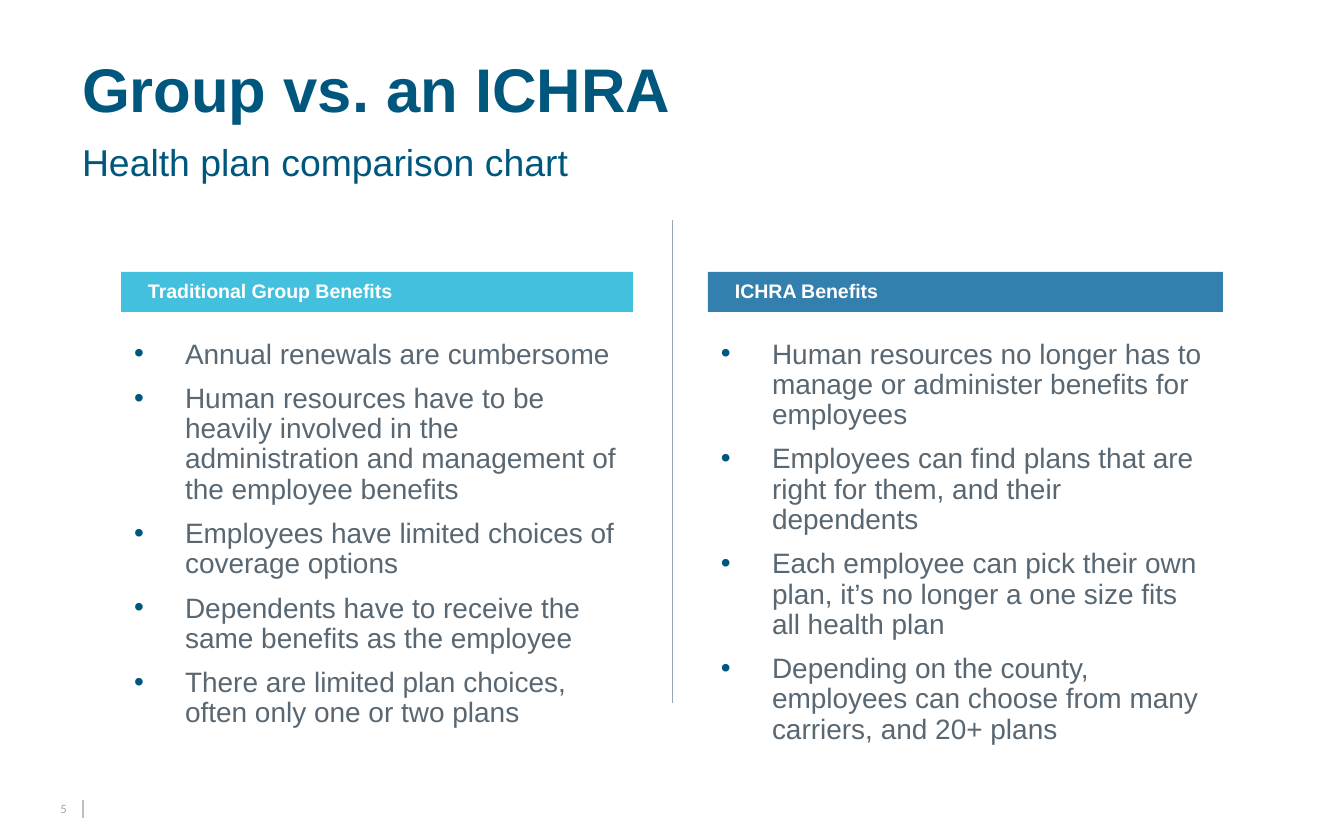
import pptx
import pptx.dml.color
import pptx.enum.shapes
import pptx.enum.text
import pptx.oxml
import pptx.oxml.ns
import pptx.util

PX = 914400 / 134.4
ALIGN = pptx.enum.text.PP_ALIGN
ANCHOR = pptx.enum.text.MSO_ANCHOR
NAVY, GREY, WHITE = "00577E", "596772", "FFFFFF"
COMPARISON_LAYOUT = 4
HEADING_TOP, HEADING_HEIGHT = 272, 40
LIST_TOP, LIST_HEIGHT = 333, 352

COLUMNS = [
    {
        "left": 121, "width": 512, "fill": "44C0DF",
        "heading": "Traditional Group Benefits",
        "points": [
            "Annual renewals are cumbersome",
            "Human resources have to be heavily involved in the administration "
            "and management of the employee benefits",
            "Employees have limited choices of coverage options",
            "Dependents have to receive the same benefits as the employee",
            "There are limited plan choices, often only one or two plans",
        ],
    },
    {
        "left": 708, "width": 515, "fill": "337FAE",
        "heading": "ICHRA Benefits",
        "points": [
            "Human resources no longer has to manage or administer benefits for employees",
            "Employees can find plans that are right for them, and their dependents",
            "Each employee can pick their own plan, it’s no longer a one size fits all health plan",
            "Depending on the county, employees can choose from many carriers, and 20+ plans",
        ],
    },
]


def px(length):
    return pptx.util.Emu(round(length * PX))


def rgb(value):
    return pptx.dml.color.RGBColor.from_string(value)


def apply(target, values):
    for name, value in values.items():
        setattr(target, name, value)


def place(shape, left, top, width, height):
    apply(shape, {"left": px(left), "top": px(top), "width": px(width), "height": px(height)})


def add_bullet(paragraph):
    """Give the paragraph a navy bullet and a hanging indent."""
    properties = paragraph._p.get_or_add_pPr()
    properties.set("marL", str(px(51)))
    properties.set("indent", str(px(-51)))
    namespace = pptx.oxml.ns.nsdecls("a")
    for xml in (
        f'<a:buClr {namespace}><a:srgbClr val="{NAVY}"/></a:buClr>',
        f'<a:buFont {namespace} typeface="Arial"/>',
        f'<a:buChar {namespace} char="•"/>',
    ):
        properties.append(pptx.oxml.parse_xml(xml))


def write(shape, lines, size, color, bold=False, font="Arial", align=ALIGN.LEFT,
          anchor=ANCHOR.MIDDLE, bullets=False, margins=(13, 7, 13, 7)):
    frame = shape.text_frame
    apply(frame, {"word_wrap": True, "vertical_anchor": anchor,
                  "auto_size": pptx.enum.text.MSO_AUTO_SIZE.NONE})
    sides = ("margin_left", "margin_top", "margin_right", "margin_bottom")
    apply(frame, dict(zip(sides, map(px, margins))))
    for index, line in enumerate(lines):
        paragraph = frame.add_paragraph() if index else frame.paragraphs[0]
        if bullets:
            add_bullet(paragraph)
        apply(paragraph, {"alignment": align, "line_spacing": 0.9,
                          "space_before": pptx.util.Pt(7.5 if index else 0)})
        run = paragraph.add_run()
        run.text = line
        apply(run.font, {"name": font, "size": pptx.util.Pt(size), "bold": bold})
        run.font.color.rgb = rgb(color)


def add_text(slide, box, text, **text_format):
    write(slide.shapes.add_textbox(*map(px, box)), [text], **text_format)


def add_vertical_line(slide, x, top, bottom, color, width):
    line = slide.shapes.add_connector(
        pptx.enum.shapes.MSO_CONNECTOR.STRAIGHT, px(x), px(top), px(x), px(bottom))
    line.line.color.rgb = rgb(color)
    line.line.width = pptx.util.Pt(width)
    line._element.spPr.append(
        pptx.oxml.parse_xml(f'<a:effectLst {pptx.oxml.ns.nsdecls("a")}/>'))


def fill_column(heading, body, column):
    left, width = column["left"], column["width"]
    place(heading, left, HEADING_TOP, width, HEADING_HEIGHT)
    heading.fill.solid()
    heading.fill.fore_color.rgb = rgb(column["fill"])
    write(heading, [column["heading"]], size=10.5, color=WHITE, bold=True,
          margins=(27, 7, 13, 7))
    place(body, left, LIST_TOP, width, LIST_HEIGHT)
    write(body, column["points"], size=15, color=GREY, anchor=ANCHOR.TOP, bullets=True)


def main():
    presentation = pptx.Presentation()
    apply(presentation, {"slide_width": px(1344), "slide_height": px(840)})
    slide = presentation.slides.add_slide(presentation.slide_layouts[COMPARISON_LAYOUT])

    add_vertical_line(slide, 83, 800, 818, "BFBFBF", 1)
    add_vertical_line(slide, 672, 220, 703, "98A4AE", 0.5)

    title, *placeholders = slide.placeholders
    place(title, 69, 35, 970, 116)
    write(title, ["Group vs. an ICHRA"], size=33, color=NAVY, bold=True)
    add_text(slide, (69, 106, 1154, 116), "Health plan comparison chart", size=20, color=NAVY)

    for heading, body, column in zip(placeholders[::2], placeholders[1::2], COLUMNS):
        fill_column(heading, body, column)

    add_text(slide, (40, 801, 27, 16), "5", size=6.8, color="A6A6A6", font="Calibri",
             align=ALIGN.RIGHT, margins=(0, 0, 0, 0))
    presentation.save("out.pptx")


if __name__ == "__main__":
    main()
